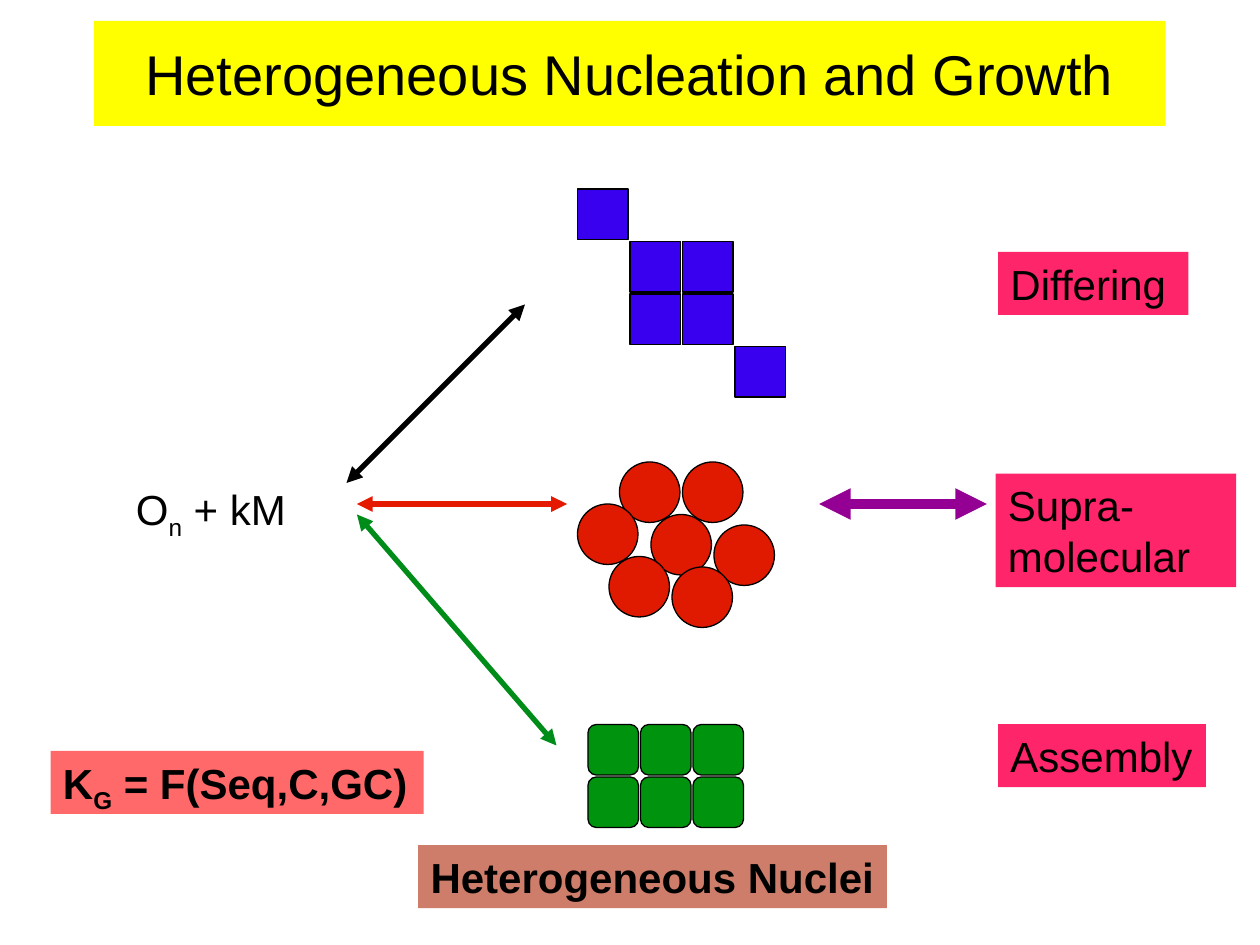
from pptx import Presentation
from pptx.dml.color import RGBColor
from pptx.enum.shapes import MSO_CONNECTOR, MSO_SHAPE
from pptx.enum.text import MSO_ANCHOR, MSO_AUTO_SIZE, PP_ALIGN
from pptx.oxml.ns import qn
from pptx.util import Cm, Pt
from lxml import etree

RECT, ROUND, OVAL = MSO_SHAPE.RECTANGLE, MSO_SHAPE.ROUNDED_RECTANGLE, MSO_SHAPE.OVAL
STRAIGHT = MSO_CONNECTOR.STRAIGHT
MIDDLE, CENTER = MSO_ANCHOR.MIDDLE, PP_ALIGN.CENTER
FIT = MSO_AUTO_SIZE.SHAPE_TO_FIT_TEXT

FONT, BLACK, PINK = "Arial", "000000", "FF256A"
UNIT = 2.54 / 12  # drawing grid, in cm
STEP = 5          # tile pitch, in grid units
TILE, BALL = 1.02, 1.22

# Content: a line is a list of runs; a run starting with "_" is a subscript
TITLE = [["Heterogeneous Nucleation and Growth"]]
# lines, box in cm, fill, opacity %, bold, wrap
NOTES = [
    ([["O", "_n", " + kM"]], (2.49, 9.63, 3.58, 1.27), None, 100, False, False),
    ([["Heterogeneous Nuclei"]], (8.43, 17.04, 9.45, 1.27), "AA2200", 59, True, False),
    ([["K", "_G", " = F(Seq,C,GC)"]], (1.02, 15.14, 7.52, 1.27), "FF0000", 59, True, False),
]
STAGES = [
    ([["Differing"]], (20.12, 5.08, 3.84, 1.27), PINK, 100, False, True),
    ([["Supra-"], ["molecular"]], (20.07, 9.55, 4.85, 2.29), PINK, 100, False, True),
    ([["Assembly"]], (20.12, 14.6, 4.19, 1.27), PINK, 100, False, False),
]

# Tiles as (column, row); balls and arrows in grid units
BLUES = [(0, 0), (1, 1), (2, 1), (1, 2), (2, 2), (3, 3)]
GREENS = [(col, row) for row in range(2) for col in range(3)]
BALLS = [(59, 44), (65, 44), (62, 49), (68, 50), (64, 54), (58, 53), (55, 48)]
ARROWS = [
    ((33, 46), (50, 29), BLACK, 3),
    ((34, 48), (54, 48), "E41900", 3),
    ((34, 49), (53, 71), "008C19", 3),
    ((78, 48), (94, 48), "940094", 6),
]


def rgb(code):
    return RGBColor.from_string(code)


def grid(*spots):
    return [Cm(spot * UNIT) for spot in spots]


def write(frame, lines, size, bold=False):
    for num, line in enumerate(lines):
        para = frame.paragraphs[0] if num == 0 else frame.add_paragraph()
        for part in line:
            run = para.add_run()
            run.text = part.lstrip("_")
            font = run.font
            font.name, font.size, font.bold = FONT, Pt(size), bold
            font.color.rgb = rgb(BLACK)
            if part.startswith("_"):
                run._r.get_or_add_rPr().set("baseline", "-25000")


def label(shapes, lines, box, fill, alpha, bold, wrap, size=24):
    item = shapes.add_textbox(*map(Cm, box))
    if fill:
        item.fill.solid()
        item.fill.fore_color.rgb = rgb(fill)
        if alpha < 100:
            color = item._element.spPr.find(".//" + qn("a:srgbClr"))
            etree.SubElement(color, qn("a:alpha")).set("val", str(alpha * 1000))
    frame = item.text_frame
    frame.word_wrap, frame.auto_size = wrap, FIT
    write(frame, lines, size, bold)
    return frame


def block(shapes, kind, left, top, side, fill):
    item = shapes.add_shape(kind, *grid(left, top), Cm(side), Cm(side))
    item.shadow.inherit = False
    item.fill.solid()
    item.fill.fore_color.rgb = rgb(fill)
    item.line.color.rgb = rgb(BLACK)
    item.line.width = Pt(0.75)


def tiles(shapes, kind, cells, left, top, fill):
    group = shapes.add_group_shape()
    for col, row in cells:
        block(group.shapes, kind, left + col * STEP, top + row * STEP, TILE, fill)


def arrow(shapes, start, end, color, width):
    item = shapes.add_connector(STRAIGHT, *grid(*start, *end))
    item.line.color.rgb = rgb(color)
    item.line.width = Pt(width)
    for tip in ("a:headEnd", "a:tailEnd"):
        etree.SubElement(item.line._get_or_add_ln(), qn(tip)).set("type", "triangle")
    etree.SubElement(item._element.spPr, qn("a:effectLst"))


def main():
    deck = Presentation()
    deck.slide_width, deck.slide_height = Cm(25.4), Cm(19.05)
    shapes = deck.slides.add_slide(deck.slide_layouts[6]).shapes

    # Title band
    frame = label(shapes, TITLE, (1.9, 0.42, 21.6, 2.12), "FFFF00", 100, False, True, 32)
    frame.auto_size = MSO_AUTO_SIZE.NONE
    frame.vertical_anchor = MIDDLE
    frame.paragraphs[0].alignment = CENTER

    # Three kinds of nuclei
    tiles(shapes, RECT, BLUES, 55, 18, "3800EE")
    for left, top in BALLS:
        block(shapes, OVAL, left, top, BALL, "E01A00")
    tiles(shapes, ROUND, GREENS, 56, 69, "00930E")

    # Arrows, then labels
    for spec_row in ARROWS:
        arrow(shapes, *spec_row)
    for note in NOTES:
        label(shapes, *note)
    group = shapes.add_group_shape()
    for stage in STAGES:
        label(group.shapes, *stage)

    deck.save("out.pptx")


if __name__ == "__main__":
    main()
